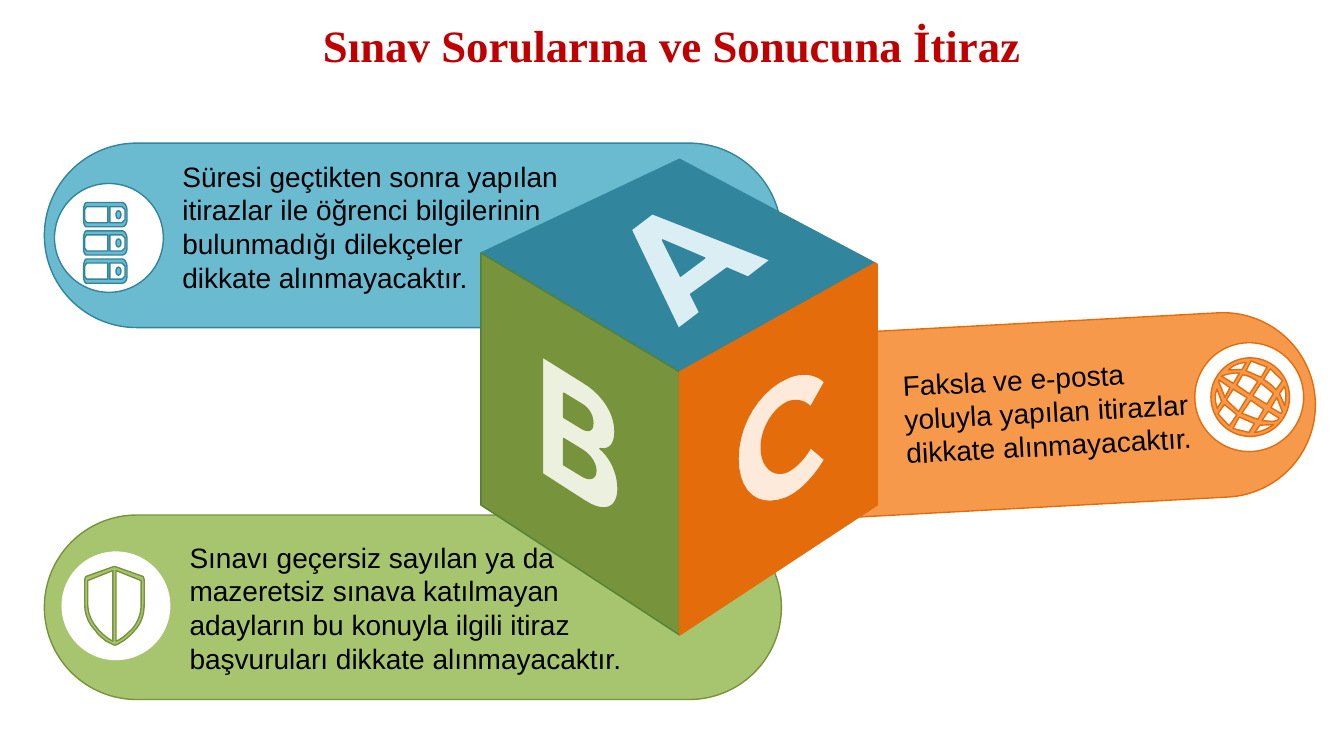
import math
from dataclasses import dataclass

from pptx import Presentation
from pptx import util as u
from pptx.dml.color import RGBColor
from pptx.enum import shapes, text

# A contour is a list of steps: (x, y) is a corner, six numbers are a cubic curve.
Contour = list[tuple[float, ...]]
CURVE_STEPS = 10
TILT = -3.1


@dataclass
class Banner:
    left: float
    top: float
    fill: str
    line: str
    rotation: float
    disc_left: float
    disc_top: float
    disc_line: str | None
    caption: str
    caption_box: tuple[float, float, float, float]
    caption_rotation: float = 0
    inset: float | None = None


@dataclass
class Outline:
    contours: list[Contour]
    fill: str
    line: str
    rotation: float = 0


BANNERS = [
    Banner(0.44, 5.11, "A7C46E", "77933C", 0, 0.61, 5.47, None,
           "Sınavı geçersiz sayılan ya da mazeretsiz sınava katılmayan adayların "
           "bu konuyla ilgili itiraz başvuruları dikkate alınmayacaktır.",
           (1.76, 5.24, 4.66, 1.59), inset=0.12),
    Banner(5.74, 3.25, "F7994B", "E46C0A", 180 + TILT, 11.85, 3.4, "E46C0A",
           "Faksla ve e-posta\nyoluyla yapılan itirazlar dikkate alınmayacaktır.",
           (8.85, 3.46, 3.13, 1.25), TILT, 0.12),
    Banner(0.44, 1.42, "6ABAD0", "31859C", 0, 0.54, 1.82, "31859C",
           "Süresi geçtikten sonra yapılan\nitirazlar ile öğrenci bilgilerinin "
           "bulunmadığı dilekçeler\ndikkate alınmayacaktır.",
           (1.71, 1.53, 5.31, 1.45)),
]

SHIELD = Outline([
    [(1.42, 5.72), (1.14, 5.62), (1.13, 5.62), (0.85, 5.72), (0.84, 5.75), (0.84, 5.99),
     (0.84, 6.1, 0.88, 6.19, 0.95, 6.26), (0.97, 6.3, 1.02, 6.33, 1.05, 6.36),
     (1.08, 6.37, 1.12, 6.4, 1.14, 6.4), (1.16, 6.4, 1.2, 6.37, 1.22, 6.36),
     (1.26, 6.33, 1.3, 6.3, 1.33, 6.26), (1.4, 6.19, 1.43, 6.1, 1.43, 5.99), (1.43, 5.75)],
    [(0.97, 6.24), (0.91, 6.17, 0.87, 6.09, 0.87, 5.99), (0.87, 5.76), (1.12, 5.66),
     (1.12, 6.36), (1.09, 6.35, 1.02, 6.3, 0.97, 6.24)],
    [(1.4, 5.99), (1.4, 6.09, 1.37, 6.17, 1.31, 6.24), (1.25, 6.3, 1.19, 6.35, 1.15, 6.36),
     (1.15, 5.66), (1.4, 5.76)],
], "A7C46E", "77933C")

GLOBE_RIM: Contour = [
    (12.4 + 0.39 * math.cos(math.radians(angle)), 3.94 + 0.39 * math.sin(math.radians(angle)))
    for angle in range(0, 360, 6)
]
GLOBE = Outline([
    GLOBE_RIM,
    [(12.76, 3.95), (12.66, 4), (12.65, 3.95, 12.63, 3.9, 12.6, 3.85), (12.71, 3.79)],
    [(12.1, 4.13), (12.21, 4.06), (12.31, 4.19), (12.22, 4.24)],
    [(12.04, 3.93), (12.14, 3.88), (12.2, 4.03), (12.08, 4.09)],
    [(12.32, 3.74), (12.25, 3.62), (12.31, 3.63, 12.36, 3.64, 12.42, 3.68)],
    [(12.44, 3.71), (12.49, 3.74, 12.52, 3.8, 12.54, 3.84), (12.41, 3.91), (12.34, 3.77)],
    [(12.2, 3.66), (12.21, 3.64), (12.27, 3.76), (12.18, 3.82)],
    [(12.29, 3.79), (12.37, 3.93), (12.23, 4.01), (12.18, 3.85)],
    [(12.25, 4.04), (12.39, 3.97), (12.46, 4.11), (12.36, 4.17)],
    [(12.49, 4.15), (12.55, 4.26), (12.53, 4.27), (12.48, 4.27, 12.44, 4.23, 12.39, 4.2)],
    [(12.61, 4.22), (12.59, 4.23), (12.53, 4.13), (12.63, 4.07)],
    [(12.51, 4.08), (12.43, 3.94), (12.56, 3.87), (12.62, 4.02)],
    [(12.59, 3.82), (12.49, 3.69), (12.58, 3.63), (12.69, 3.76)],
    [(12.53, 3.62), (12.46, 3.66), (12.34, 3.6), (12.4, 3.58, 12.48, 3.59, 12.53, 3.62)],
    [(12.15, 3.71), (12.13, 3.84), (12.06, 3.88), (12.07, 3.82, 12.1, 3.75, 12.15, 3.71)],
    [(12.27, 4.27), (12.35, 4.23), (12.47, 4.29), (12.4, 4.3, 12.33, 4.29, 12.27, 4.27)],
    [(12.66, 4.18), (12.67, 4.05), (12.75, 4.01), (12.74, 4.07, 12.7, 4.13, 12.66, 4.18)],
], "F7994B", "E46C0A", -28.8)

CUBE = [
    Outline([[(8.68, 2.61), (6.74, 3.69), (4.77, 2.51), (6.74, 1.58)]], "31859C", "31859C"),
    Outline([
        [(7.21, 2.66), (7.42, 2.75), (7.64, 2.58), (6.47, 2.12), (6.26, 2.28), (6.73, 3.26),
         (6.94, 3.1), (6.85, 2.92)],
        [(6.99, 2.56), (6.75, 2.74), (6.57, 2.38)],
    ], "DBEEF4", "31859C"),
    Outline([[(6.74, 3.69), (6.74, 6.3), (4.77, 5.01), (4.77, 2.51)]], "77933C", "548235"),
    Outline([
        [(5.38, 3.54), (5.38, 4.7), (5.8, 4.97), (6, 5.1, 6.13, 5.04, 6.13, 4.85),
         (6.13, 4.7, 6.06, 4.54, 5.95, 4.45), (6.05, 4.47, 6.1, 4.4, 6.1, 4.28),
         (6.1, 4.1, 5.98, 3.91, 5.78, 3.79)],
        [(5.59, 3.9), (5.77, 4.01), (5.84, 4.05, 5.88, 4.12, 5.88, 4.2),
         (5.88, 4.27, 5.84, 4.29, 5.77, 4.25), (5.59, 4.14)],
        [(5.59, 4.35), (5.77, 4.46), (5.85, 4.51, 5.91, 4.59, 5.91, 4.67),
         (5.91, 4.75, 5.85, 4.77, 5.77, 4.72), (5.59, 4.61)],
    ], "EBF1DE", "77933C"),
    Outline([[(6.74, 3.69), (8.68, 2.61), (8.7, 2.62), (8.7, 5.01), (6.74, 6.3)]],
            "E46C0A", "E46C0A"),
    Outline([
        [(7.81, 3.75), (7.53, 3.87, 7.32, 4.21, 7.32, 4.55), (7.32, 4.89, 7.52, 5.05, 7.8, 4.94),
         (7.94, 4.88, 8.08, 4.73, 8.18, 4.56), (8.04, 4.44), (7.98, 4.55, 7.89, 4.64, 7.81, 4.68),
         (7.67, 4.74, 7.55, 4.63, 7.55, 4.44), (7.55, 4.25, 7.67, 4.06, 7.81, 3.99),
         (7.89, 3.96, 7.98, 3.97, 8.04, 4.04), (8.18, 3.79), (8.09, 3.7, 7.94, 3.69, 7.81, 3.75)],
    ], "FDEADA", "E46C0A"),
]


def color(value: str) -> RGBColor:
    return RGBColor.from_string(value)


def paint(shape, fill: str, line: str | None, rotation: float = 0) -> None:
    shape.shadow.inherit = False
    shape.fill.solid()
    shape.fill.fore_color.rgb = color(fill)
    shape.rotation = rotation
    if line is None:
        shape.line.fill.background()
    else:
        shape.line.color.rgb = color(line)
        shape.line.width = u.Pt(1)


def add_preset(slide, preset, left: float, top: float, width: float, height: float,
               fill: str, line: str | None, rotation: float = 0):
    shape = slide.shapes.add_shape(preset, *map(u.Inches, (left, top, width, height)))
    paint(shape, fill, line, rotation)
    return shape


def flatten(contour: Contour) -> list[tuple[int, int]]:
    """Turn corners and cubic curves into points in EMU."""
    points: list[tuple[float, float]] = []
    for step in contour:
        if len(step) == 2:
            points.append((step[0], step[1]))
            continue
        control = [points[-1], step[0:2], step[2:4], step[4:6]]
        for index in range(1, CURVE_STEPS + 1):
            t = index / CURVE_STEPS
            weights = [math.comb(3, k) * (1 - t) ** (3 - k) * t ** k for k in range(4)]
            points.append(tuple(sum(w * p[axis] for w, p in zip(weights, control))
                                for axis in (0, 1)))
    return [(u.Inches(x), u.Inches(y)) for x, y in points]


def add_outline(slide, outline: Outline) -> None:
    first, *holes = [flatten(contour) for contour in outline.contours]
    builder = slide.shapes.build_freeform(*first[0])
    builder.add_line_segments(first[1:], close=True)
    for hole in holes:
        builder.move_to(*hole[0])
        builder.add_line_segments(hole[1:], close=True)
    paint(builder.convert_to_shape(), outline.fill, outline.line, outline.rotation)


def add_text(slide, content: str, box: tuple[float, float, float, float], *, size: float = 20,
             font: str = "Arial", font_color: str = "000000", bold: bool = False,
             align=text.PP_ALIGN.LEFT, anchor=text.MSO_ANCHOR.TOP, spacing: float = 1.0,
             rotation: float = 0, inset: float | None = None, grow: bool = True) -> None:
    shape = slide.shapes.add_textbox(*map(u.Inches, box))
    shape.rotation = rotation
    frame = shape.text_frame
    frame.word_wrap = True
    frame.vertical_anchor = anchor
    frame.auto_size = text.MSO_AUTO_SIZE.SHAPE_TO_FIT_TEXT if grow else text.MSO_AUTO_SIZE.NONE
    if inset is not None:
        frame.margin_left = frame.margin_right = u.Inches(inset)
        frame.margin_top = frame.margin_bottom = u.Inches(inset)
    paragraph = frame.paragraphs[0]
    paragraph.text = content.replace("\n", "\v")
    paragraph.alignment = align
    paragraph.line_spacing = spacing
    for run in paragraph.runs:
        run.font.name, run.font.size, run.font.bold = font, u.Pt(size), bold
        run.font.color.rgb = color(font_color)


def add_banner(slide, banner: Banner) -> None:
    bar = add_preset(slide, shapes.MSO_SHAPE.ROUNDED_RECTANGLE, banner.left, banner.top,
                     7.31, 1.83, banner.fill, banner.line, banner.rotation)
    bar.adjustments[0] = 0.5
    add_preset(slide, shapes.MSO_SHAPE.OVAL, banner.disc_left, banner.disc_top,
               1.08, 1.08, "FFFFFF", banner.disc_line)
    add_text(slide, banner.caption, banner.caption_box,
             rotation=banner.caption_rotation, inset=banner.inset)


def add_drive(slide, top: float) -> None:
    """Draw one unit of the server icon."""
    case: Contour = [
        (1.21, top), (0.86, top), (0.84, top, 0.83, top + 0.04, 0.83, top + 0.08),
        (0.83, top + 0.17), (0.83, top + 0.21, 0.84, top + 0.24, 0.86, top + 0.24),
        (1.21, top + 0.24), (1.24, top + 0.24, 1.26, top + 0.21, 1.26, top + 0.17),
        (1.26, top + 0.08), (1.26, top + 0.04, 1.24, top, 1.21, top)]
    windows: list[Contour] = [
        [(inner, top + 0.2), (corner, top + 0.2), (outer, top + 0.17), (outer, top + 0.07),
         (corner, top + 0.04), (inner, top + 0.04)]
        for inner, corner, outer in ((1.07, 0.86, 0.84), (1.09, 1.21, 1.24))]
    add_outline(slide, Outline([case, *windows], "6ABAD0", "31859C"))
    add_preset(slide, shapes.MSO_SHAPE.OVAL, 1.15, top + 0.08, 0.05, 0.08, "6ABAD0", "31859C")


def main() -> None:
    presentation = Presentation()
    presentation.slide_width, presentation.slide_height = u.Inches(13.33), u.Inches(7.5)
    slide = presentation.slides.add_slide(presentation.slide_layouts[6])
    for banner in BANNERS:
        add_banner(slide, banner)
    for row in range(3):
        add_drive(slide, 2.01 + 0.28 * row)
    for outline in (SHIELD, GLOBE, *CUBE):
        add_outline(slide, outline)
    add_text(slide, "Sınav Sorularına ve Sonucuna İtiraz", (3.07, 0, 7.19, 0.77), size=32,
             font="Times New Roman", font_color="C00000", bold=True, spacing=0.9,
             align=text.PP_ALIGN.CENTER, anchor=text.MSO_ANCHOR.BOTTOM, grow=False)
    presentation.save("out.pptx")


if __name__ == "__main__":
    main()
